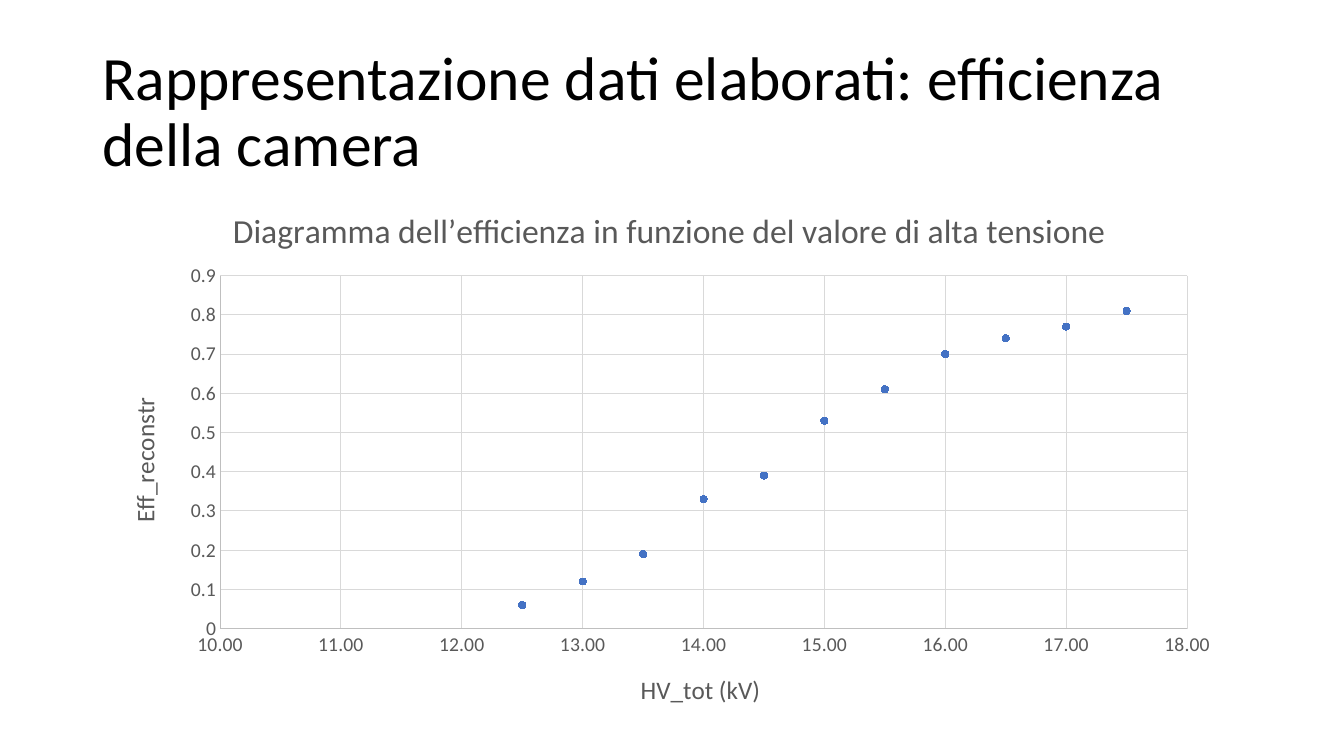
"""Build a slide with a scatter chart of chamber efficiency against high voltage."""
import pptx
import pptx.chart.data
import pptx.dml.color
import pptx.enum.chart
import pptx.enum.text
import pptx.oxml
import pptx.oxml.ns
import pptx.util

Pt = pptx.util.Pt
RGBColor = pptx.dml.color.RGBColor
BLACK = RGBColor(0x00, 0x00, 0x00)
GRAY = RGBColor(0x59, 0x59, 0x59)
AXIS = RGBColor(0xBF, 0xBF, 0xBF)
GRID = RGBColor(0xD9, 0xD9, 0xD9)
BLUE = RGBColor(0x44, 0x72, 0xC4)
POINTS = [(17.5, 0.81), (17, 0.77), (16.5, 0.74), (16, 0.7), (15.5, 0.61), (15, 0.53),
          (14.5, 0.39), (14, 0.33), (13.5, 0.19), (13, 0.12), (12.5, 0.06)]


def set_font(font, size, color):
    for name, value in {"name": "Calibri", "size": Pt(size), "bold": False}.items():
        setattr(font, name, value)
    font.color.rgb = color


def set_title(owner, text, size):
    owner.has_title = True
    title = owner.chart_title if hasattr(owner, "chart_title") else owner.axis_title
    tf = title.text_frame
    tf.text = text
    set_font(tf.paragraphs[0].runs[0].font, size, GRAY)
    return tf


prs = pptx.Presentation()
prs.slide_width, prs.slide_height = Pt(960), Pt(540)
s = prs.slides.add_slide(prs.slide_layouts[6])

data = pptx.chart.data.XyChartData()
series_data = data.add_series("Eff_reconstr")
for hv, efficiency in POINTS:
    series_data.add_data_point(hv, efficiency)
chart = s.shapes.add_chart(pptx.enum.chart.XL_CHART_TYPE.XY_SCATTER,
                           Pt(75), Pt(133), Pt(806), Pt(385), data).chart
chart.has_legend = False
set_font(chart.font, 14, GRAY)
chart.has_title = True
tf = chart.chart_title.text_frame
tf.text = "Diagramma dell’efficienza in funzione del valore di alta tensione"
set_font(tf.paragraphs[0].runs[0].font, 24, GRAY)
chart.chart_title.include_in_layout = False

axes = [(chart.category_axis, "HV_tot (kV)", 10, 18, 1, "0.00"),
        (chart.value_axis, "Eff_reconstr", 0, 0.9, 0.1, "General")]
for axis, text, low, high, step, number_format in axes:
    tf = set_title(axis, text, 18)
    formats = {"minimum_scale": low, "maximum_scale": high, "major_unit": step,
               "has_major_gridlines": True, "has_minor_gridlines": False,
               "major_tick_mark": pptx.enum.chart.XL_TICK_MARK.NONE,
               "minor_tick_mark": pptx.enum.chart.XL_TICK_MARK.NONE}
    for name, value in formats.items():
        setattr(axis, name, value)
    axis.tick_labels.number_format = number_format
    axis.tick_labels.number_format_is_linked = False
    set_font(axis.tick_labels.font, 14, GRAY)
    for line, color in ((axis.format.line, AXIS), (axis.major_gridlines.format.line, GRID)):
        line.color.rgb = color
        line.width = Pt(0.75)
tf._txBody.bodyPr.set("rot", "-5400000")

plot = chart.plots[0]
plot.vary_by_categories = False
series = plot.series[0]
series.format.line.fill.background()
marker = series.marker
marker.style = pptx.enum.chart.XL_MARKER_STYLE.CIRCLE
marker.size = 5
marker.format.fill.solid()
marker.format.fill.fore_color.rgb = BLUE
marker.format.line.color.rgb = BLUE

qn = pptx.oxml.ns.qn
area = chart._chartSpace.chart.plotArea
for old in area.findall(qn("c:layout")):
    area.remove(old)
settings = {"layoutTarget": "inner", "xMode": "edge", "yMode": "edge",
            "x": 0.102, "y": 0.166, "w": 0.857, "h": 0.655}
parts = "".join(f'<c:{name} val="{value}"/>' for name, value in settings.items())
area.insert(0, pptx.oxml.parse_xml(
    f'<c:layout {pptx.oxml.ns.nsdecls("c")}><c:manualLayout>{parts}</c:manualLayout></c:layout>'))

sp = s.shapes.add_textbox(Pt(66), Pt(29), Pt(828), Pt(104))
tf = sp.text_frame
tf.word_wrap = True
tf.vertical_anchor = pptx.enum.text.MSO_ANCHOR.MIDDLE
p = tf.paragraphs[0]
p.line_spacing = 0.9
r = p.add_run()
r.text = "Rappresentazione dati elaborati: efficienza della camera"
set_font(r.font, 44, BLACK)

prs.save("out.pptx")
